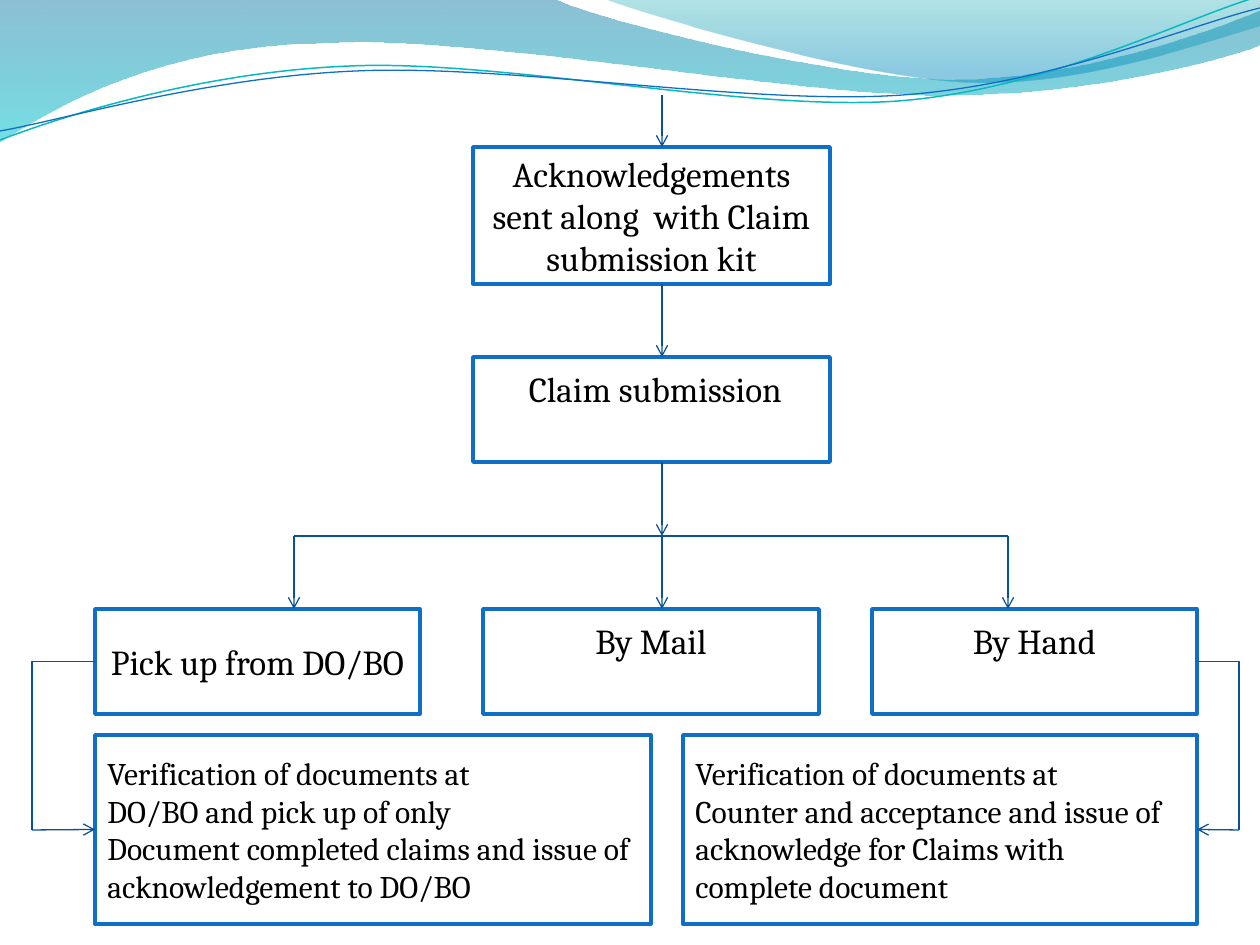
from dataclasses import dataclass

from lxml.etree import SubElement
from pptx import Presentation
from pptx.dml.color import RGBColor
from pptx.enum.shapes import MSO_CONNECTOR as Link, MSO_SHAPE as Preset
from pptx.enum.text import MSO_ANCHOR as Anchor, PP_ALIGN as Align
from pptx.oxml.ns import qn
from pptx.util import Pt

EMU_PER_PX = 914400 / 126
LEFT, RIGHT = 1, 3


@dataclass(frozen=True)
class Theme:
    font: str = "Cambria"
    text: str = "000000"
    paper: str = "FFFFFF"
    border: str = "0F6FC6"
    arrow: str = "095295"
    teal_line: str = "0AB8BF"
    # Gradient stops: position, colour, opacity in percent
    deep_wave: tuple = ((0, "0074A1", 45), (1, "00C6CF", 55))
    light_wave: tuple = ((0, "00A1A9", 30), (0.8, "008BBF", 45))
    step_size: int = 20
    detail_size: int = 18
    border_width: float = 2
    line_width: float = 0.75


def px(length):
    return round(length * EMU_PER_PX)


def color(value):
    return RGBColor.from_string(value)


def bend(shape, segments):
    """Turn each run of three line points into one cubic curve."""
    lines = iter(list(shape._element.iter(qn("a:lnTo"))))
    for segment in segments:
        first = next(lines)
        if len(segment) == 6:
            first.tag = qn("a:cubicBezTo")
            for _ in range(2):
                extra = next(lines)
                first.append(extra[0])
                extra.getparent().remove(extra)


class Page:
    def __init__(self, deck, theme):
        self.theme = theme
        self.shapes = deck.slides.add_slide(deck.slide_layouts[6]).shapes

    def outline(self, start, segments, close):
        """Segments hold 2 numbers for a line, 6 for a cubic curve."""
        builder = self.shapes.build_freeform(*start, scale=EMU_PER_PX)
        points = [point for segment in segments
                  for point in zip(segment[::2], segment[1::2])]
        builder.add_line_segments(points, close=close)
        shape = builder.convert_to_shape()
        bend(shape, segments)
        shape.shadow.inherit = False
        return shape

    def wave(self, start, segments, stops):
        shape = self.outline(start, segments, True)
        shape.line.fill.background()
        shape.fill.gradient()
        shape.fill.gradient_angle = 270
        for stop, (position, value, _) in zip(shape.fill.gradient_stops, stops):
            stop.position = position
            stop.color.rgb = color(value)
        values = shape._element.spPr.iter(qn("a:srgbClr"))
        for element, (_, _, opacity) in zip(values, stops):
            SubElement(element, qn("a:alpha")).set("val", str(opacity * 1000))

    def ribbon(self, start, segments, value, width):
        shape = self.outline(start, segments, False)
        shape.fill.background()
        shape.line.color.rgb = color(value)
        shape.line.width = Pt(width)

    def box(self, left, top, width, height, text, size, anchor, align):
        shape = self.shapes.add_shape(
            Preset.RECTANGLE, px(left), px(top), px(width), px(height))
        shape.shadow.inherit = False
        shape.fill.solid()
        shape.fill.fore_color.rgb = color(self.theme.paper)
        shape.line.color.rgb = color(self.theme.border)
        shape.line.width = Pt(self.theme.border_width)
        frame = shape.text_frame
        frame.text = text
        frame.word_wrap = True
        frame.vertical_anchor = anchor
        if anchor == Anchor.TOP:
            frame.margin_top = px(10)
        for para in frame.paragraphs:
            para.alignment = align
            for span in para.runs:
                span.font.name = self.theme.font
                span.font.size = Pt(size)
                span.font.color.rgb = color(self.theme.text)
        return shape

    def step(self, left, top, width, height, text, anchor=Anchor.MIDDLE):
        return self.box(left, top, width, height, text,
                        self.theme.step_size, anchor, Align.CENTER)

    def detail(self, left, top, width, height, text):
        return self.box(left, top, width, height, text,
                        self.theme.detail_size, Anchor.MIDDLE, Align.LEFT)

    def line(self, x1, y1, x2, y2, arrow=True, kind=Link.STRAIGHT):
        link = self.shapes.add_connector(kind, px(x1), px(y1), px(x2), px(y2))
        link.line.color.rgb = color(self.theme.arrow)
        link.line.width = Pt(self.theme.line_width)
        if arrow:
            SubElement(link.line._get_or_add_ln(), qn("a:tailEnd")).set("type", "arrow")
        SubElement(link._element.spPr, qn("a:effectLst"))
        return link

    def corner(self, x1, y1, x2, y2):
        link = self.line(x1, y1, x2, y2, arrow=False, kind=Link.ELBOW)
        link._element.spPr.find(qn("a:prstGeom")).set("prst", "bentConnector2")
        return link


def main():
    theme = Theme()
    deck = Presentation()
    deck.slide_width, deck.slide_height = px(1260), px(945)
    page = Page(deck, theme)

    # Waves along the top
    page.wave((0, 0), [
        (554, -1), (600, 21, 837, 79, 955, 79), (1075, 79, 1207, 33, 1260, 11),
        (1261, 45), (1239, 55, 1096, 96, 940, 95), (784, 95, 481, 35, 324, 43),
        (163, 45, 58, 105, -1, 142)], theme.deep_wave)
    page.wave((604, -1), [
        (641, 14, 859, 78, 969, 82), (1079, 87, 1211, 40, 1260, 26),
        (1260, 0)], theme.light_wave)
    page.ribbon((0, 140), [
        (60, 117, 199, 72, 349, 66), (498, 59, 747, 112, 898, 101),
        (1050, 89, 1182, 19, 1257, -3)], theme.teal_line, 0.85)
    page.ribbon((0, 131), [
        (59, 121, 207, 77, 357, 71), (508, 64, 752, 106, 903, 95),
        (1053, 84, 1186, 26, 1260, 8)], theme.border, theme.line_width)

    # Main steps
    page.step(473, 147, 357, 137, "Acknowledgements sent along  with Claim submission kit")
    page.step(473, 357, 357, 105, " Claim submission", Anchor.TOP)

    # Ways of submitting
    pick_up = page.step(95, 609, 325, 105, "Pick up from DO/BO")
    page.step(483, 609, 336, 105, "By Mail", Anchor.TOP)
    by_hand = page.step(872, 609, 325, 105, "By Hand", Anchor.TOP)

    # Verification
    office = page.detail(
        95, 735, 556, 189,
        "Verification of documents at\nDO/BO and pick up of only\n"
        "Document completed claims and issue of acknowledgement to DO/BO")
    counter = page.detail(
        683, 735, 514, 189,
        "Verification of documents at\nCounter and acceptance and issue of "
        "acknowledge for Claims with complete document")

    # Trunk and branches
    trunk, fork, ways_top = 662, 536, 609
    first_branch, last_branch = 294, 1008
    for start, end in ((95, 147), (284, 357), (462, fork)):
        page.line(trunk, start, trunk, end)
    for branch in (first_branch, trunk, last_branch):
        page.line(branch, fork, branch, ways_top)
    page.line(first_branch, fork, last_branch, fork, arrow=False)

    # Side loops from a way of submitting to its verification
    for way, check, side, edge, lane in (
            (pick_up, office, LEFT, 95, 32), (by_hand, counter, RIGHT, 1197, 1239)):
        page.corner(edge, 662, lane, 830).begin_connect(way, side)
        page.line(lane, 830, edge, 830).end_connect(check, side)

    deck.save("out.pptx")


if __name__ == "__main__":
    main()
